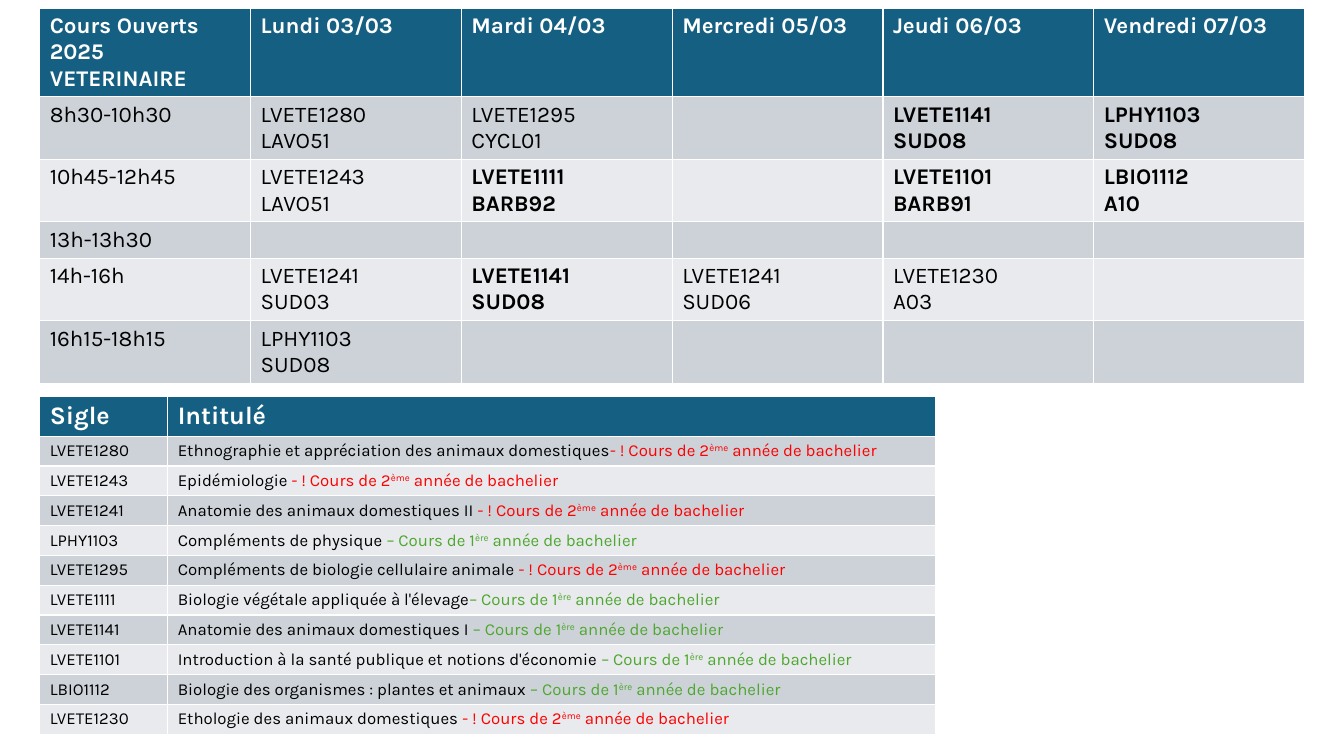
from pptx import Presentation
from pptx.dml.color import RGBColor
from pptx.util import Pt

COLORS = {
    "header": "156082", "odd": "CCD2D8", "even": "E8EAED",
    "white": "FFFFFF", "black": "000000", "red": "FF0000", "green": "4EA72E",
}
FONT = "Karla"
LEFT = 28.4

DAYS = ["Cours Ouverts 2025\nVETERINAIRE", "Lundi 03/03", "Mardi 04/03",
        "Mercredi 05/03", "Jeudi 06/03", "Vendredi 07/03"]
# Course and room per day; a star marks bold.
SLOTS = [
    ["8h30-10h30", "LVETE1280 LAVO51", "LVETE1295 CYCL01", "",
     "*LVETE1141 SUD08", "*LPHY1103 SUD08"],
    ["10h45-12h45", "LVETE1243 LAVO51", "*LVETE1111 BARB92", "",
     "*LVETE1101 BARB91", "*LBIO1112 A10"],
    ["13h-13h30", "", "", "", "", ""],
    ["14h-16h", "LVETE1241 SUD03", "*LVETE1141 SUD08", "LVETE1241 SUD06",
     "LVETE1230 A03", ""],
    ["16h15-18h15", "LPHY1103 SUD08", "", "", "", ""],
]
SLOT_HEIGHTS = [44.5, 44.5, 26, 44.5, 44.5]

COURSES = [
    ("LVETE1280", "Ethnographie et appréciation des animaux domestiques", 2),
    ("LVETE1243", "Epidémiologie ", 2),
    ("LVETE1241", "Anatomie des animaux domestiques II ", 2),
    ("LPHY1103", "Compléments de physique ", 1),
    ("LVETE1295", "Compléments de biologie cellulaire animale ", 2),
    ("LVETE1111", "Biologie végétale appliquée à l'élevage", 1),
    ("LVETE1141", "Anatomie des animaux domestiques I ", 1),
    ("LVETE1101", "Introduction à la santé publique et notions d'économie ", 1),
    ("LBIO1112", "Biologie des organismes : plantes et animaux ", 1),
    ("LVETE1230", "Ethologie des animaux domestiques ", 2),
]
YEARS = {1: ("– Cours de 1", "ère", "green"), 2: ("- ! Cours de 2", "ème", "red")}


def rgb(name):
    return RGBColor.from_string(COLORS[name])


def add_grid(slide, left, top, widths, heights):
    """Add a table with a dark header row and alternating body rows."""
    grid = slide.shapes.add_table(len(heights), len(widths), Pt(left), Pt(top),
                                  Pt(sum(widths)), Pt(sum(heights))).table
    for column, width in zip(grid.columns, widths):
        column.width = Pt(width)
    for i, (row, height) in enumerate(zip(grid.rows, heights)):
        row.height = Pt(height)
        for cell in row.cells:
            cell.fill.solid()
            cell.fill.fore_color.rgb = rgb("header" if i == 0 else "odd" if i % 2 else "even")
    return grid


def style_cell(cell, size, color="black", bold=False):
    for paragraph in cell.text_frame.paragraphs:
        font = paragraph.font
        font.name, font.size, font.bold = FONT, Pt(size), bold
        font.color.rgb = rgb(color)


def fill_header(grid, labels, size):
    for cell, label in zip(grid.rows[0].cells, labels):
        cell.text = label
        style_cell(cell, size, "white", True)


def add_timetable(slide, left, top, width):
    grid = add_grid(slide, left, top, [width / len(DAYS)] * len(DAYS),
                    [62.8] + SLOT_HEIGHTS)
    fill_header(grid, DAYS, 16)
    for i, slot in enumerate(SLOTS, 1):
        for cell, entry in zip(grid.rows[i].cells, slot):
            cell.text = entry.lstrip("*").replace(" ", "\v")
            style_cell(cell, 16, bold=entry.startswith("*"))


def add_course_list(slide, left, top, width):
    code_width = 91.4
    grid = add_grid(slide, left, top, [code_width, width - code_width],
                    [27.5] + [21.3] * len(COURSES))
    fill_header(grid, ["Sigle", "Intitulé"], 18)
    for i, (code, title, year) in enumerate(COURSES, 1):
        code_cell, title_cell = grid.rows[i].cells
        code_cell.text = code
        style_cell(code_cell, 12)
        style_cell(title_cell, 12)
        paragraph = title_cell.text_frame.paragraphs[0]
        paragraph.add_run().text = title
        lead, ordinal, color = YEARS[year]
        for part in (lead, ordinal, " année de bachelier"):
            run = paragraph.add_run()
            run.text = part
            run.font.color.rgb = rgb(color)
            if part == ordinal:
                run._r.get_or_add_rPr().set("baseline", "30000")


def main():
    deck = Presentation()
    deck.slide_width, deck.slide_height = Pt(960), Pt(540)
    slide = deck.slides.add_slide(deck.slide_layouts[6])
    add_timetable(slide, LEFT, 5.8, 903.6)
    add_course_list(slide, LEFT, 283.2, 640)
    deck.save("out.pptx")


if __name__ == "__main__":
    main()
